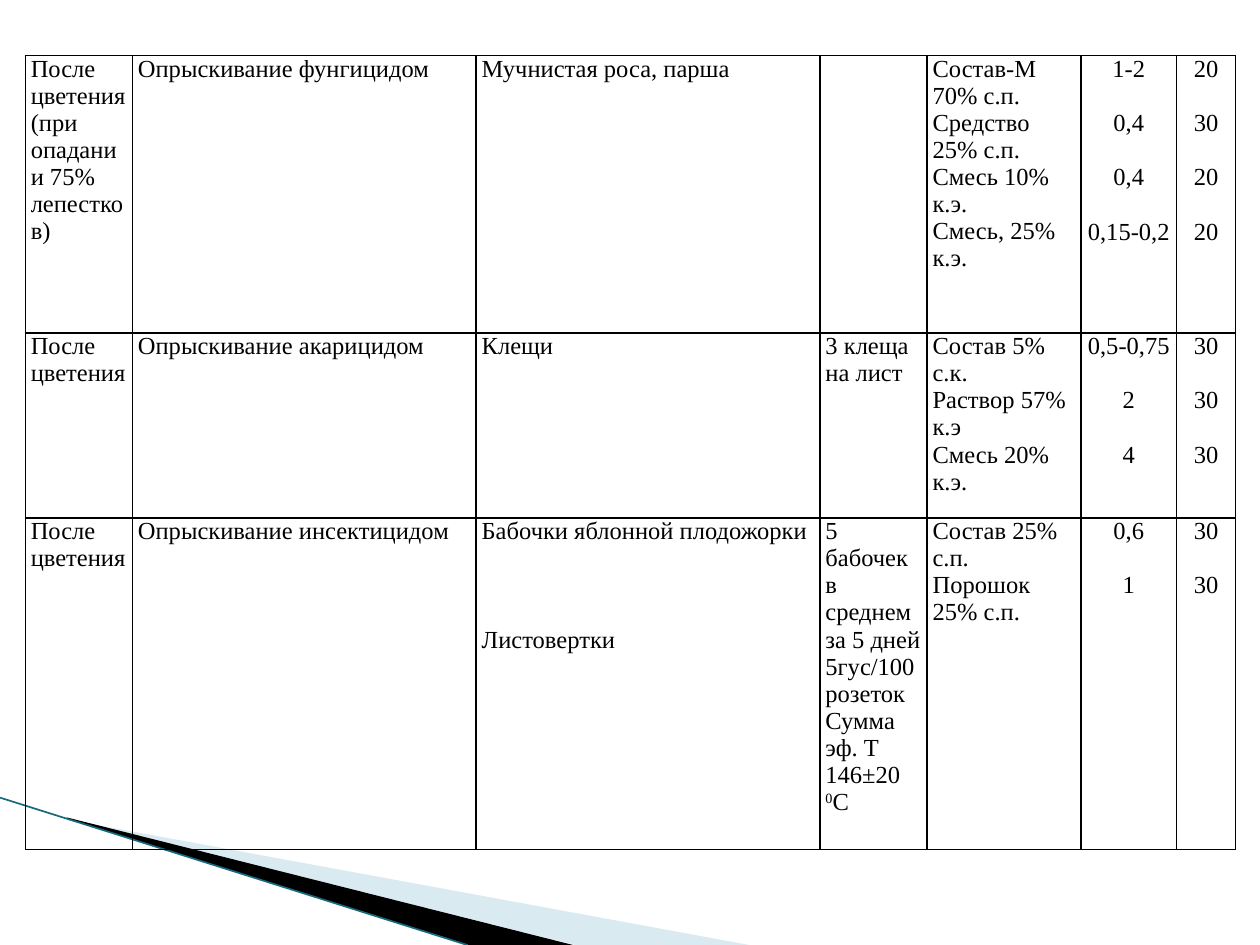
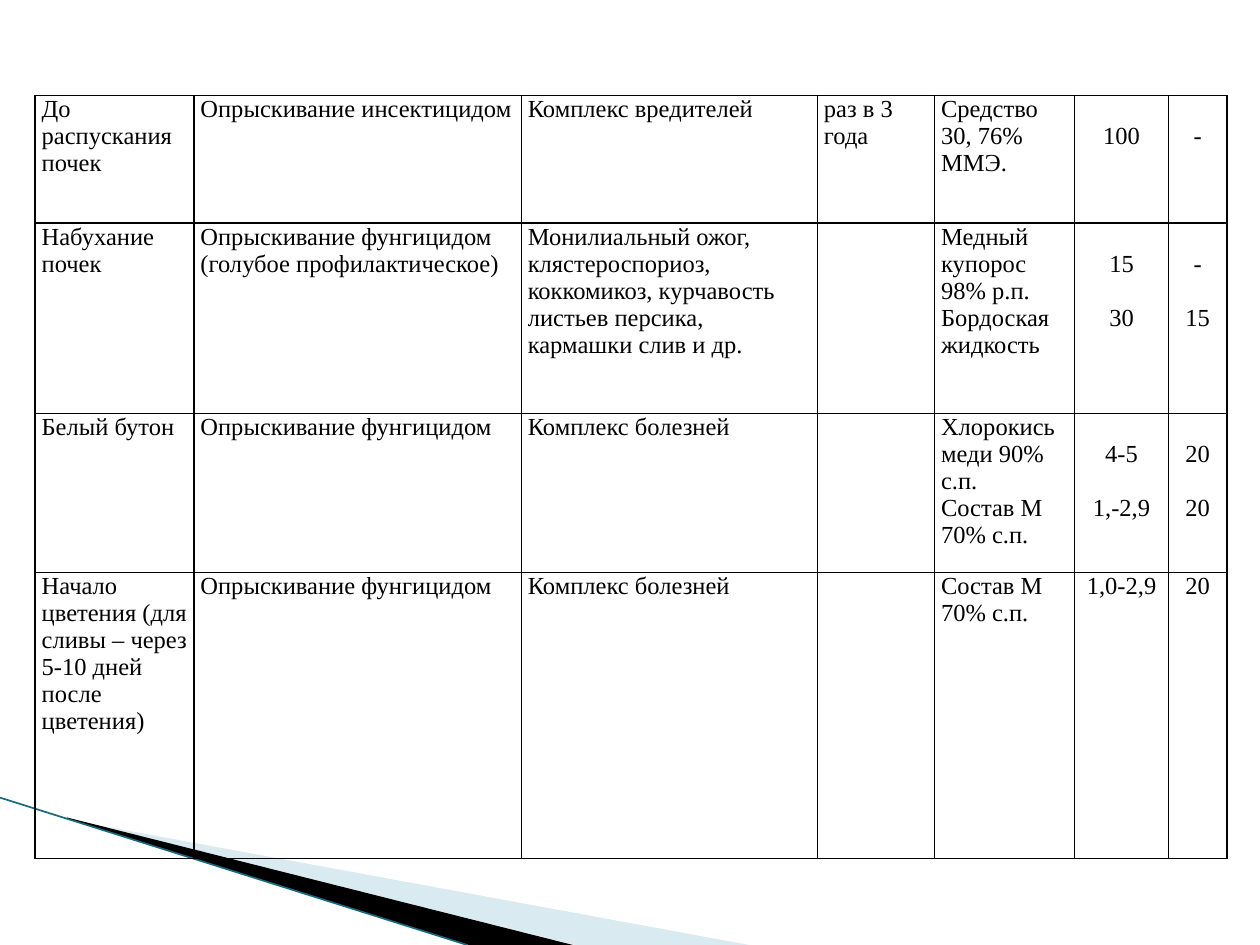
from dataclasses import dataclass

from lxml import etree
from pptx import Presentation
from pptx.dml.color import RGBColor
from pptx.enum import shapes, text
from pptx.oxml.ns import qn
from pptx.util import Cm, Pt


@dataclass(frozen=True)
class Theme:
    font: str = "Times New Roman"
    size: float = 14
    line_pitch: float = 15.5
    ink: str = "000000"
    pale: str = "A0CBDC"
    teal: str = "17697F"
    border: float = 1
    stripe: float = 0.95


theme = Theme()

# Wedges at the foot of every slide: outline in cm, colour, opacity in percent
wedges = [
    ([(1.4, 16.53), (15.1, 19.05), (11.6, 19.05), (1.4, 16.51)], theme.pale, 40),
    ([(1.35, 16.48), (11.55, 19.05), (9.45, 19.05), (1.37, 16.51)], theme.ink, 100),
]

# Tables: each line of a cell is a paragraph, an empty line is a gap of one line,
# and text between ^ marks is raised
schedules = [
    {
        "left": 0.51, "top": 1.12, "inset": 0.11,
        "columns": [2.16, 6.93, 6.93, 2.16, 3.1, 1.93, 1.19],
        "heights": [5.59, 3.73, 6.68],
        "rows": [
            ["После цветения (при опадании 75% лепестков)",
             "Опрыскивание фунгицидом", "Мучнистая роса, парша", "",
             "Состав-М 70% с.п.\nСредство 25% с.п.\nСмесь 10% к.э.\nСмесь, 25% к.э.",
             "1-2\n\n0,4\n\n0,4\n\n0,15-0,2", "20\n\n30\n\n20\n\n20"],
            ["После цветения", "Опрыскивание акарицидом", "Клещи", "3 клеща на лист",
             "Состав 5% с.к.\nРаствор 57% к.э\nСмесь 20% к.э.",
             "0,5-0,75\n\n2\n\n4", "30\n\n30\n\n30"],
            ["После цветения", "Опрыскивание инсектицидом",
             "Бабочки яблонной плодожорки\n\n\n\nЛистовертки",
             "5 бабочек в среднем за 5 дней\n5гус/100 розеток\nСумма эф. T 146±20 ^0^С",
             "Состав 25% с.п.\nПорошок 25% с.п.", "0,6\n\n1", "30\n\n30"],
        ],
    },
    {
        "left": 0.71, "top": 1.93, "inset": 0.13,
        "columns": [3.2, 6.6, 5.97, 2.36, 2.82, 1.9, 1.17],
        "heights": [2.57, 3.84, 3.2, 5.77],
        "rows": [
            ["До распускания почек", "Опрыскивание инсектицидом", "Комплекс вредителей",
             "раз в 3 года", "Средство 30, 76% ММЭ.", "\n100", "\n-"],
            ["Набухание почек", "Опрыскивание фунгицидом (голубое профилактическое)",
             "Монилиальный ожог, клястероспориоз, коккомикоз, курчавость листьев "
             "персика, кармашки слив и др.", "",
             "Медный купорос 98% р.п.\nБордоская жидкость", "\n15\n\n30", "\n-\n\n15"],
            ["Белый бутон", "Опрыскивание фунгицидом", "Комплекс болезней", "",
             "Хлорокись меди 90% с.п.\nСостав М 70% с.п.",
             "\n4-5\n\n1,-2,9", "\n20\n\n20"],
            ["Начало цветения (для сливы – через 5-10 дней после цветения)",
             "Опрыскивание фунгицидом", "Комплекс болезней", "",
             "Состав М 70% с.п.", "1,0-2,9", "20"],
        ],
    },
]
first_centred_column = 5


def write_cell(cell, content, alignment):
    """Fill a cell, turning empty lines into spacing."""
    gap = 0
    started = False
    for line in content.split("\n"):
        if not line:
            gap += theme.line_pitch
            continue
        frame = cell.text_frame
        paragraph = frame.add_paragraph() if started else frame.paragraphs[0]
        if started:
            paragraph.space_before = Pt(gap)
        else:
            cell.margin_top = Pt(gap)
        paragraph.alignment = alignment
        paragraph.font.name = theme.font
        paragraph.font.size = Pt(theme.size)
        paragraph.font.color.rgb = RGBColor.from_string(theme.ink)
        for index, part in enumerate(line.split("^")):
            run = paragraph.add_run()
            run.text = part
            if index % 2:
                run.font._element.set("baseline", "30000")
        started, gap = True, 0


def frame_cell(cell):
    """Draw the four borders and leave the cell unfilled."""
    properties = cell._tc.get_or_add_tcPr()
    for side in ("lnL", "lnR", "lnT", "lnB"):
        border = etree.SubElement(properties, qn(f"a:{side}"), w=str(Pt(theme.border)))
        fill = etree.SubElement(border, qn("a:solidFill"))
        etree.SubElement(fill, qn("a:srgbClr"), val=theme.ink)
    cell.fill.background()


presentation = Presentation()
presentation.slide_width = Cm(25.4)
presentation.slide_height = Cm(19.05)
blank_layout = presentation.slide_layouts[6]

for schedule in schedules:
    slide = presentation.slides.add_slide(blank_layout)

    # Wedges
    for outline, colour, opacity in wedges:
        points = [(Cm(x), Cm(y)) for x, y in outline]
        builder = slide.shapes.build_freeform(*points[0])
        builder.add_line_segments(points[1:], close=True)
        wedge = builder.convert_to_shape()
        wedge.shadow.inherit = False
        wedge.line.fill.background()
        wedge.fill.solid()
        wedge.fill.fore_color.rgb = RGBColor.from_string(colour)
        if opacity < 100:
            tint = wedge._element.spPr.find(f".//{qn('a:srgbClr')}")
            etree.SubElement(tint, qn("a:alpha"), val=str(opacity * 1000))

    # Stripe along the lower edge of the wedges
    stripe = slide.shapes.add_connector(
        shapes.MSO_CONNECTOR.STRAIGHT, Cm(0), Cm(16.08), Cm(9.42), Cm(19.05))
    stripe.line.color.rgb = RGBColor.from_string(theme.teal)
    stripe.line.width = Pt(theme.stripe)
    etree.SubElement(stripe._element.spPr, qn("a:effectLst"))

    # Spraying schedule
    columns, heights, rows = schedule["columns"], schedule["heights"], schedule["rows"]
    table = slide.shapes.add_table(
        len(rows), len(columns), Cm(schedule["left"]), Cm(schedule["top"]),
        Cm(sum(columns)), Cm(sum(heights))).table
    table.first_row = False
    table.horz_banding = False
    for column, width in zip(table.columns, columns):
        column.width = Cm(width)
    for row, height, contents in zip(table.rows, heights, rows):
        row.height = Cm(height)
        for index, (cell, content) in enumerate(zip(row.cells, contents)):
            cell.margin_left = cell.margin_right = Cm(schedule["inset"])
            cell.margin_top = cell.margin_bottom = 0
            centred = index >= first_centred_column
            write_cell(cell, content,
                       text.PP_ALIGN.CENTER if centred else text.PP_ALIGN.LEFT)
            frame_cell(cell)

presentation.save("out.pptx")
